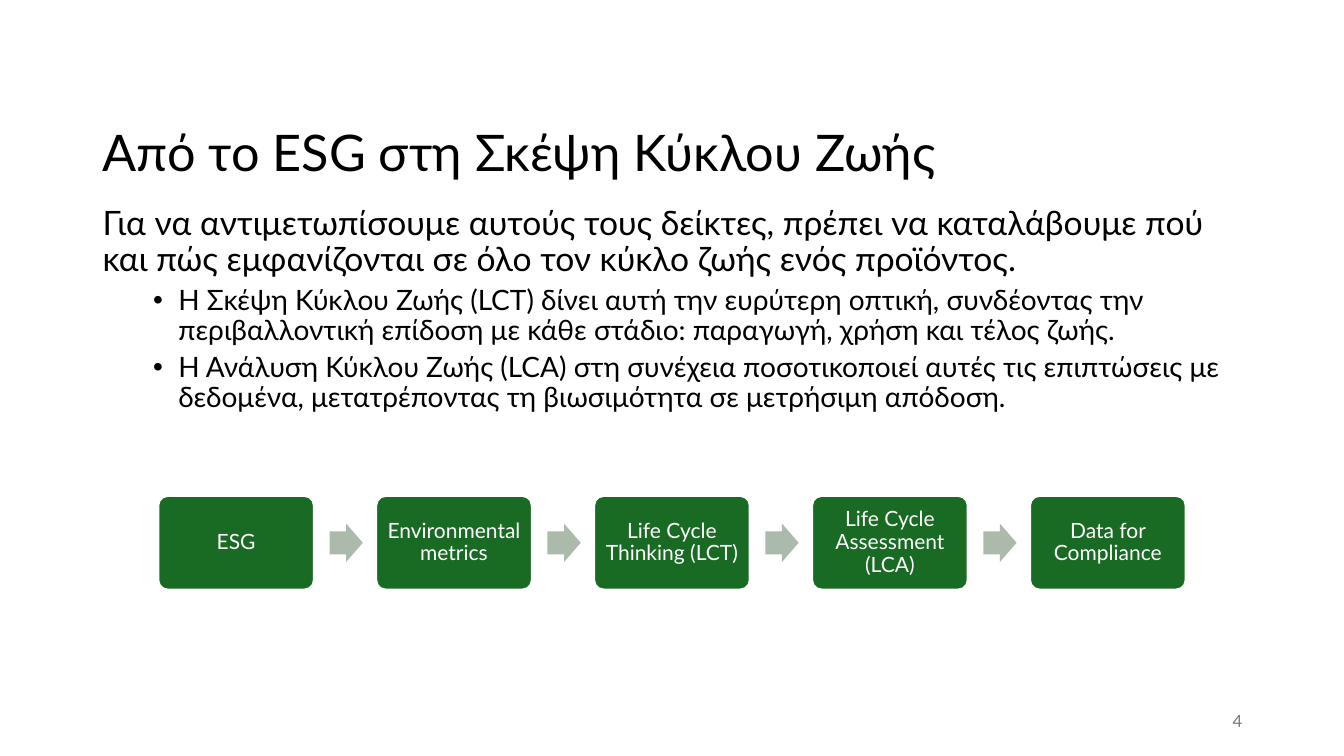
from dataclasses import dataclass

from lxml.etree import SubElement
from pptx import Presentation
from pptx.dml.color import RGBColor
from pptx.enum.shapes import MSO_SHAPE
from pptx.enum.text import MSO_ANCHOR, PP_ALIGN
from pptx.oxml.ns import qn
from pptx.util import Inches, Pt


@dataclass(frozen=True)
class Theme:
    font: str = "Lato"
    ink: str = "000000"
    muted: str = "797979"
    light: str = "FFFFFF"
    green: str = "196B24"
    sage: str = "ACBAAC"
    title: int = 36
    lead: int = 24
    point: int = 20
    step: int = 15
    small: int = 12


THEME = Theme()
WIDE, HIGH = 13.33, 7.5
LEFT, SPAN = 0.92, 11.5

TITLE = "Από το ESG στη Σκέψη Κύκλου Ζωής"
LEAD = ("Για να αντιμετωπίσουμε αυτούς τους δείκτες, πρέπει να καταλάβουμε πού "
        "και πώς εμφανίζονται σε όλο τον κύκλο ζωής ενός προϊόντος.")
POINTS = [
    "Η Σκέψη Κύκλου Ζωής (LCT) δίνει αυτή την ευρύτερη οπτική, συνδέοντας την "
    "περιβαλλοντική επίδοση με κάθε στάδιο: παραγωγή, χρήση και τέλος ζωής.",
    "Η Ανάλυση Κύκλου Ζωής (LCA) στη συνέχεια ποσοτικοποιεί αυτές τις επιπτώσεις με "
    "δεδομένα, μετατρέποντας τη βιωσιμότητα σε μετρήσιμη απόδοση.",
]
STEPS = ["ESG", "Environmental metrics", "Life Cycle Thinking (LCT)",
         "Life Cycle Assessment (LCA)", "Data for Compliance"]


def style(para, size, color, align=PP_ALIGN.LEFT, pitch=0.9):
    para.alignment = align
    para.line_spacing = pitch
    for run in para.runs:
        run.font.name = THEME.font
        run.font.size = Pt(size)
        run.font.color.rgb = RGBColor.from_string(color)


def frame(slide, box, anchor=MSO_ANCHOR.TOP):
    """Add a wrapping text box and return its text frame."""
    text = slide.shapes.add_textbox(*map(Inches, box)).text_frame
    text.word_wrap = True
    text.vertical_anchor = anchor
    return text


def bullet(para):
    para.level = 1
    props = para._p.get_or_add_pPr()
    props.set("marL", str(Inches(0.75)))
    props.set("indent", str(Inches(-0.25)))
    SubElement(props, qn("a:buFont")).set("typeface", "Arial")
    SubElement(props, qn("a:buChar")).set("char", "•")


def line(slide, box, words, size, color, align=PP_ALIGN.LEFT, pitch=0.9):
    """Place one paragraph, centred vertically in its box."""
    text = frame(slide, box, MSO_ANCHOR.MIDDLE)
    text.text = words
    style(text.paragraphs[0], size, color, align, pitch)


def body(slide, box, lead, points):
    text = frame(slide, box)
    text.text = lead
    style(text.paragraphs[0], THEME.lead, THEME.ink)
    for point in points:
        para = text.add_paragraph()
        para.text = point
        para.space_before = Pt(5)
        bullet(para)
        style(para, THEME.point, THEME.ink)


def solid(slide, kind, box, color):
    shape = slide.shapes.add_shape(kind, *map(Inches, box))
    shape.shadow.inherit = False
    shape.fill.solid()
    shape.fill.fore_color.rgb = RGBColor.from_string(color)
    shape.line.fill.background()
    return shape


def card(slide, box, words):
    shape = solid(slide, MSO_SHAPE.ROUNDED_RECTANGLE, box, THEME.green)
    shape.adjustments[0] = 0.1
    shape.line.color.rgb = RGBColor.from_string(THEME.light)
    shape.line.width = Pt(1.5)
    text = shape.text_frame
    text.word_wrap = True
    text.vertical_anchor = MSO_ANCHOR.MIDDLE
    text.margin_left = text.margin_right = Inches(0.08)
    text.margin_top = text.margin_bottom = Inches(0.08)
    text.text = words
    style(text.paragraphs[0], THEME.step, THEME.light, PP_ALIGN.CENTER)


def flow(slide, box, steps):
    """Spread cards evenly over the box, with an arrow in each gap."""
    left, top, width, height = box
    # A gap is 0.4 of a card; an arrow follows its card by 0.1 of a card.
    size = width / (len(steps) + 0.4 * (len(steps) - 1))
    wide, high = 0.33, 0.38
    for i, words in enumerate(steps):
        x = left + i * 1.4 * size
        card(slide, (x, top, size, height), words)
        if i < len(steps) - 1:
            spot = (x + 1.1 * size, top + (height - high) / 2, wide, high)
            arrow = solid(slide, MSO_SHAPE.RIGHT_ARROW, spot, THEME.sage)
            arrow.adjustments[0] = 0.6
            arrow.adjustments[1] = 0.5


def main():
    deck = Presentation()
    deck.slide_width, deck.slide_height = Inches(WIDE), Inches(HIGH)
    slide = deck.slides.add_slide(deck.slide_layouts[6])
    flow(slide, (1.57, 4.92, 10.19, 0.93), STEPS)
    line(slide, (LEFT, 1.23, SPAN, 0.62), TITLE, THEME.title, THEME.ink)
    body(slide, (LEFT, 2, SPAN, 2.4), LEAD, POINTS)
    line(slide, (LEFT + SPAN - 3, 6.95, 3, 0.4), "4", THEME.small, THEME.muted,
         PP_ALIGN.RIGHT, 1.0)
    deck.save("out.pptx")


if __name__ == "__main__":
    main()
